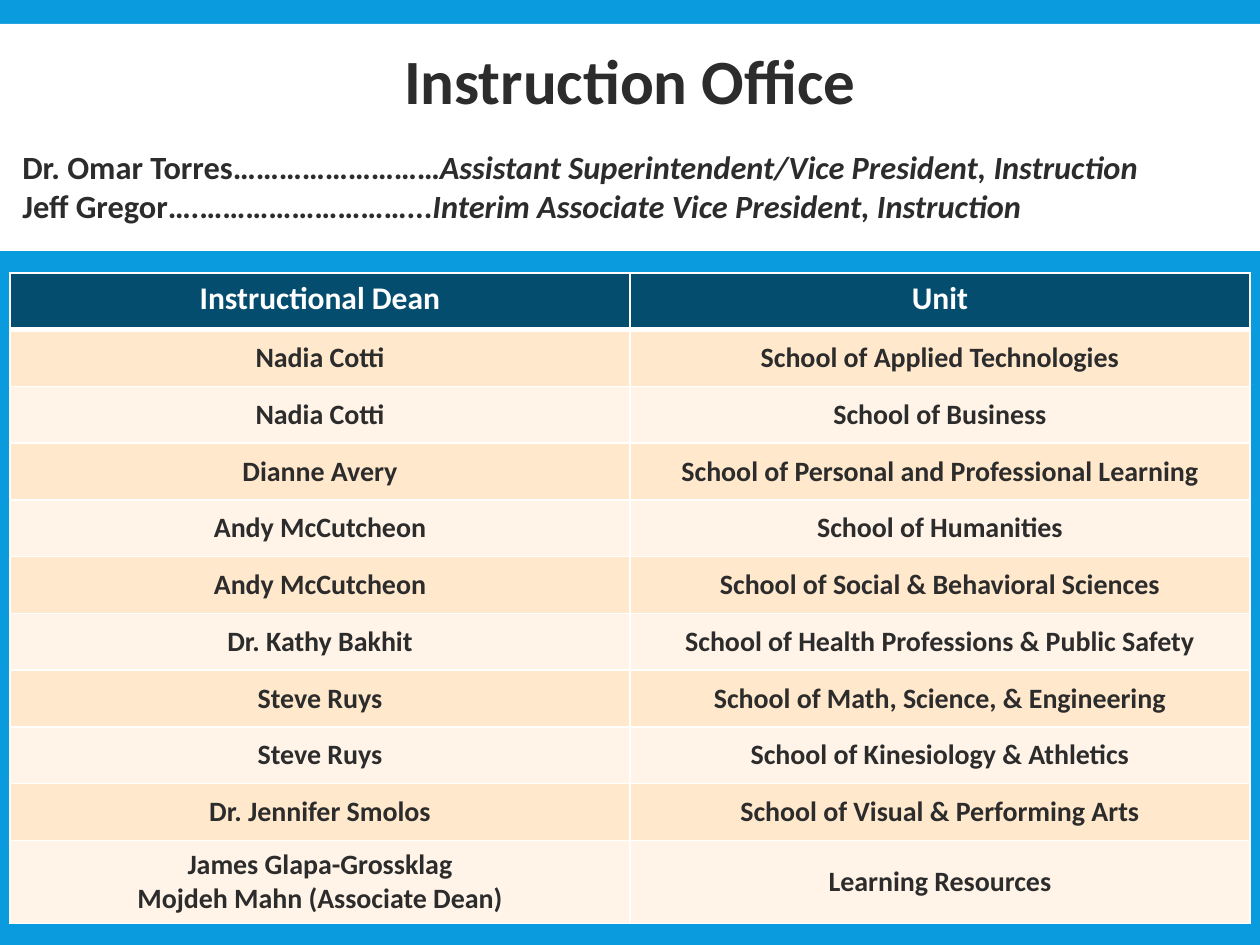
from pptx import Presentation
from pptx.dml.color import RGBColor
from pptx.enum.shapes import MSO_SHAPE as SHAPE
from pptx.enum.text import MSO_ANCHOR as ANCHOR, PP_ALIGN as ALIGN
from pptx.oxml import parse_xml
from pptx.oxml.ns import nsdecls
from pptx.util import Pt

EMU_PER_PX = 914400 // 126
BLUE = RGBColor(0x09, 0x9B, 0xDD)
NAVY = RGBColor(0x04, 0x4D, 0x6E)
PEACH = RGBColor(0xFF, 0xE8, 0xCC)
CREAM = RGBColor(0xFF, 0xF4, 0xE7)
INK = RGBColor(0x2C, 0x2C, 0x2C)
WHITE = RGBColor(0xFF, 0xFF, 0xFF)

LEADERS = [
    [("Dr. Omar Torres………………………", False),
     ("Assistant Superintendent/Vice President, Instruction", True)],
    [("Jeff Gregor….………………………...", False),
     ("Interim Associate Vice President, Instruction", True)],
]
DEANS = [
    ("Instructional Dean", "Unit"),
    ("Nadia Cotti", "School of Applied Technologies"),
    ("Nadia Cotti", "School of Business"),
    ("Dianne Avery", "School of Personal and Professional Learning"),
    ("Andy McCutcheon", "School of Humanities"),
    ("Andy McCutcheon", "School of Social & Behavioral Sciences"),
    ("Dr. Kathy Bakhit", "School of Health Professions & Public Safety"),
    ("Steve Ruys", "School of Math, Science, & Engineering"),
    ("Steve Ruys", "School of Kinesiology & Athletics"),
    ("Dr. Jennifer Smolos", "School of Visual & Performing Arts"),
    ("James Glapa-Grossklag\nMojdeh Mahn (Associate Dean)", "Learning Resources"),
]


def px(n):
    return n * EMU_PER_PX


def write(tf, text, size, color=INK, align=ALIGN.CENTER, font="Calibri"):
    """Fill a frame from a string, or from paragraphs of (text, italic) runs."""
    if isinstance(text, str):
        text = [[(line, False)] for line in text.split("\n")]
    for i, runs in enumerate(text):
        p = tf.add_paragraph() if i else tf.paragraphs[0]
        p.alignment = align
        for words, italic in runs:
            r = p.add_run()
            r.text = words
            r.font.name, r.font.size = font, Pt(size)
            r.font.bold, r.font.italic = True, italic
            r.font.color.rgb = color


def set_borders(cell, color, bottom):
    """Add 1 pt edges, with the bottom one in its own width."""
    pr = cell._tc.get_or_add_tcPr()
    for i, (side, width) in enumerate([("L", 1), ("R", 1), ("T", 1), ("B", bottom)]):
        pr.insert(i, parse_xml(
            f'<a:ln{side} {nsdecls("a")} w="{Pt(width)}"><a:solidFill>'
            f'<a:srgbClr val="{color}"/></a:solidFill></a:ln{side}>'))


class Deck:
    def __init__(self, width, height):
        self.prs = Presentation()
        self.prs.slide_width, self.prs.slide_height = px(width), px(height)

    def slide(self, color):
        self.s = self.prs.slides.add_slide(self.prs.slide_layouts[6])
        self.s.background.fill.solid()
        self.s.background.fill.fore_color.rgb = color

    def band(self, x, y, w, h, color):
        sp = self.s.shapes.add_shape(SHAPE.RECTANGLE, px(x), px(y), px(w), px(h))
        sp.shadow.inherit = False
        sp.fill.solid()
        sp.fill.fore_color.rgb = color
        sp.line.fill.background()

    def text(self, x, y, w, h, text, anchor=ANCHOR.MIDDLE, **fmt):
        tf = self.s.shapes.add_textbox(px(x), px(y), px(w), px(h)).text_frame
        tf.word_wrap = True
        tf.vertical_anchor = anchor
        write(tf, text, **fmt)

    def table(self, x, y, w, h, rows, last_height):
        tbl = self.s.shapes.add_table(
            len(rows), len(rows[0]), px(x), px(y), px(w), px(h)).table
        for row in tbl.rows:
            row.height = px(h - last_height) // (len(rows) - 1)
        tbl.rows[len(rows) - 1].height = px(last_height)
        for i, values in enumerate(rows):
            header = i == 0
            fill = NAVY if header else (CREAM, PEACH)[i % 2]
            for j, value in enumerate(values):
                cell = tbl.cell(i, j)
                cell.fill.solid()
                cell.fill.fore_color.rgb = fill
                cell.vertical_anchor = ANCHOR.TOP if header else ANCHOR.MIDDLE
                set_borders(cell, WHITE, bottom=3 if header else 1)
                write(cell.text_frame, value, size=18 if header else 16,
                      color=WHITE if header else INK)


def main():
    deck = Deck(1260, 945)
    deck.slide(BLUE)
    deck.band(0, 24, 1260, 227, WHITE)
    deck.text(63, 0, 1134, 158, "Instruction Office", size=36)
    deck.table(10, 273, 1240, 651, DEANS, last_height=83)
    deck.text(10, 98, 1250, 133, LEADERS, anchor=ANCHOR.BOTTOM,
              size=18.5, align=ALIGN.LEFT)
    deck.prs.save("out.pptx")


if __name__ == "__main__":
    main()
